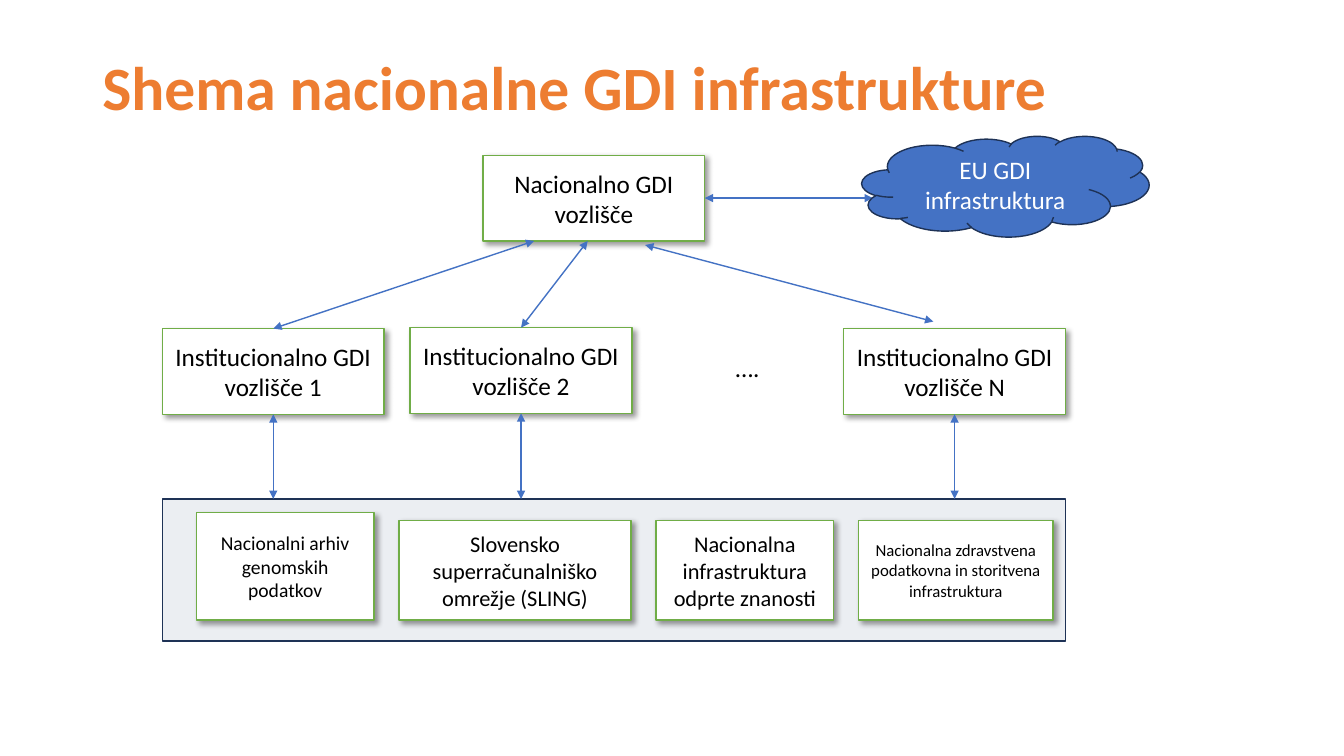
from dataclasses import dataclass

from lxml.etree import SubElement
from pptx import Presentation
from pptx.dml.color import RGBColor
from pptx.enum.shapes import MSO_CONNECTOR, MSO_SHAPE
from pptx.enum.text import MSO_ANCHOR, PP_ALIGN
from pptx.oxml.ns import qn
from pptx.util import Pt


@dataclass(frozen=True)
class Theme:
    font: str = "Calibri"
    title: str = "ED7D31"
    text: str = "000000"
    light: str = "FFFFFF"
    green: str = "70AD47"
    blue: str = "4472C4"
    navy: str = "1E3256"
    panel: str = "EBEEF2"
    title_size: int = 44
    node_size: int = 18
    line_width: int = 1


THEME = Theme()
TOP, LEFT, BOTTOM, RIGHT = range(4)
NODE_WIDTH, NODE_HEIGHT = 158.4, 61.2
PANEL_TOP = 356.4
SERVICE_BOTTOM = 443

INSTITUTIONS = [
    ("Institucionalno GDI vozlišče 1", 116, 234.7),
    ("Institucionalno GDI vozlišče 2", 293, 234),
    ("Institucionalno GDI vozlišče N", 602.7, 234.7),
]
# text, left, top, width, type size
SERVICES = [
    ("Nacionalni arhiv genomskih podatkov", 140.4, 366.3, 126.7, 14),
    ("Slovensko superračunalniško omrežje (SLING)", 285, 371.6, 165.8, 16),
    ("Nacionalna infrastruktura odprte znanosti", 468.7, 371.6, 126.7, 16),
    ("Nacionalna zdravstvena podatkovna in storitvena infrastruktura", 613.3, 371.6, 139, 12),
]


def write_text(shape, text, size, color, bold=False, align=PP_ALIGN.CENTER,
               anchor=MSO_ANCHOR.MIDDLE, line_spacing=None):
    frame = shape.text_frame
    frame.word_wrap = True
    frame.vertical_anchor = anchor
    paragraph = frame.paragraphs[0]
    paragraph.text = text
    paragraph.alignment = align
    paragraph.line_spacing = line_spacing
    font_format = {"name": THEME.font, "size": Pt(size), "bold": bold}
    for name, value in font_format.items():
        setattr(paragraph.font, name, value)
    paragraph.font.color.rgb = RGBColor.from_string(color)


def add_label(slide, bounds, text, size, color, **text_format):
    text_box = slide.shapes.add_textbox(*map(Pt, bounds))
    write_text(text_box, text, size, color, align=PP_ALIGN.LEFT, **text_format)


def add_figure(slide, kind, bounds, fill, line):
    shape = slide.shapes.add_shape(kind, *map(Pt, bounds))
    shape.shadow.inherit = False
    shape.fill.solid()
    shape.fill.fore_color.rgb = RGBColor.from_string(fill)
    shape.line.color.rgb = RGBColor.from_string(line)
    shape.line.width = Pt(THEME.line_width)
    return shape


def add_drop_shadow(shape):
    effects = shape._element.spPr.find(qn("a:effectLst"))
    shadow = SubElement(effects, qn("a:outerShdw"), blurRad=str(Pt(4)), dist=str(Pt(3)),
                        dir="2700000", algn="tl", rotWithShape="0")
    color = SubElement(shadow, qn("a:srgbClr"), val=THEME.text)
    SubElement(color, qn("a:alpha"), val="40000")


def add_node(slide, bounds, text, size=THEME.node_size):
    node = add_figure(slide, MSO_SHAPE.RECTANGLE, bounds, THEME.light, THEME.green)
    add_drop_shadow(node)
    write_text(node, text, size, THEME.text)
    return node


def add_double_arrow(slide, start, end, begin_at=None, end_at=None):
    """Draw a two-headed arrow; begin_at and end_at are (shape, side) pairs to join."""
    arrow = slide.shapes.add_connector(MSO_CONNECTOR.STRAIGHT, *map(Pt, (*start, *end)))
    if begin_at:
        arrow.begin_connect(*begin_at)
    if end_at:
        arrow.end_connect(*end_at)
    arrow.line.color.rgb = RGBColor.from_string(THEME.blue)
    arrow.line.width = Pt(THEME.line_width)
    line = arrow.line._get_or_add_ln()
    for tag in ("a:headEnd", "a:tailEnd"):
        SubElement(line, qn(tag), type="triangle")
    SubElement(arrow._element.spPr, qn("a:effectLst"))


def main():
    presentation = Presentation()
    presentation.slide_width, presentation.slide_height = Pt(960), Pt(540)
    slide = presentation.slides.add_slide(presentation.slide_layouts[6])

    add_figure(slide, MSO_SHAPE.RECTANGLE, (116, PANEL_TOP, 645, 101.5), THEME.panel, THEME.navy)
    add_label(slide, (66, 12.2, 828, 104.4), "Shema nacionalne GDI infrastrukture",
              THEME.title_size, THEME.title, bold=True, line_spacing=0.9)

    national = add_node(slide, (345, 110.9, NODE_WIDTH, NODE_HEIGHT), "Nacionalno GDI vozlišče")
    institutions = [add_node(slide, (left, top, NODE_WIDTH, NODE_HEIGHT), text)
                    for text, left, top in INSTITUTIONS]
    add_label(slide, (518.4, 248.4, 97.2, 29), "….", THEME.node_size, THEME.text,
              anchor=MSO_ANCHOR.TOP)
    for text, left, top, width, size in SERVICES:
        add_node(slide, (left, top, width, SERVICE_BOTTOM - top), text, size)

    first, second, last = institutions
    add_double_arrow(slide, (381.6, 172.1), (195.2, 234.7), end_at=(first, TOP))
    add_double_arrow(slide, (419.8, 172.1), (372.2, 234), end_at=(second, TOP))
    add_double_arrow(slide, (460.8, 175), (666.7, 229.7))
    add_double_arrow(slide, (503.4, 141.5), (623.5, 141.5), begin_at=(national, RIGHT))
    for institution, (_, left, top) in zip(institutions, INSTITUTIONS):
        center = left + NODE_WIDTH / 2
        add_double_arrow(slide, (center, top + NODE_HEIGHT), (center, PANEL_TOP),
                         begin_at=(institution, BOTTOM))

    cloud = add_figure(slide, MSO_SHAPE.CLOUD, (615.6, 97.2, 205.2, 72), THEME.blue, THEME.navy)
    write_text(cloud, "EU GDI infrastruktura", THEME.node_size, THEME.light)
    presentation.save("out.pptx")


if __name__ == "__main__":
    main()
